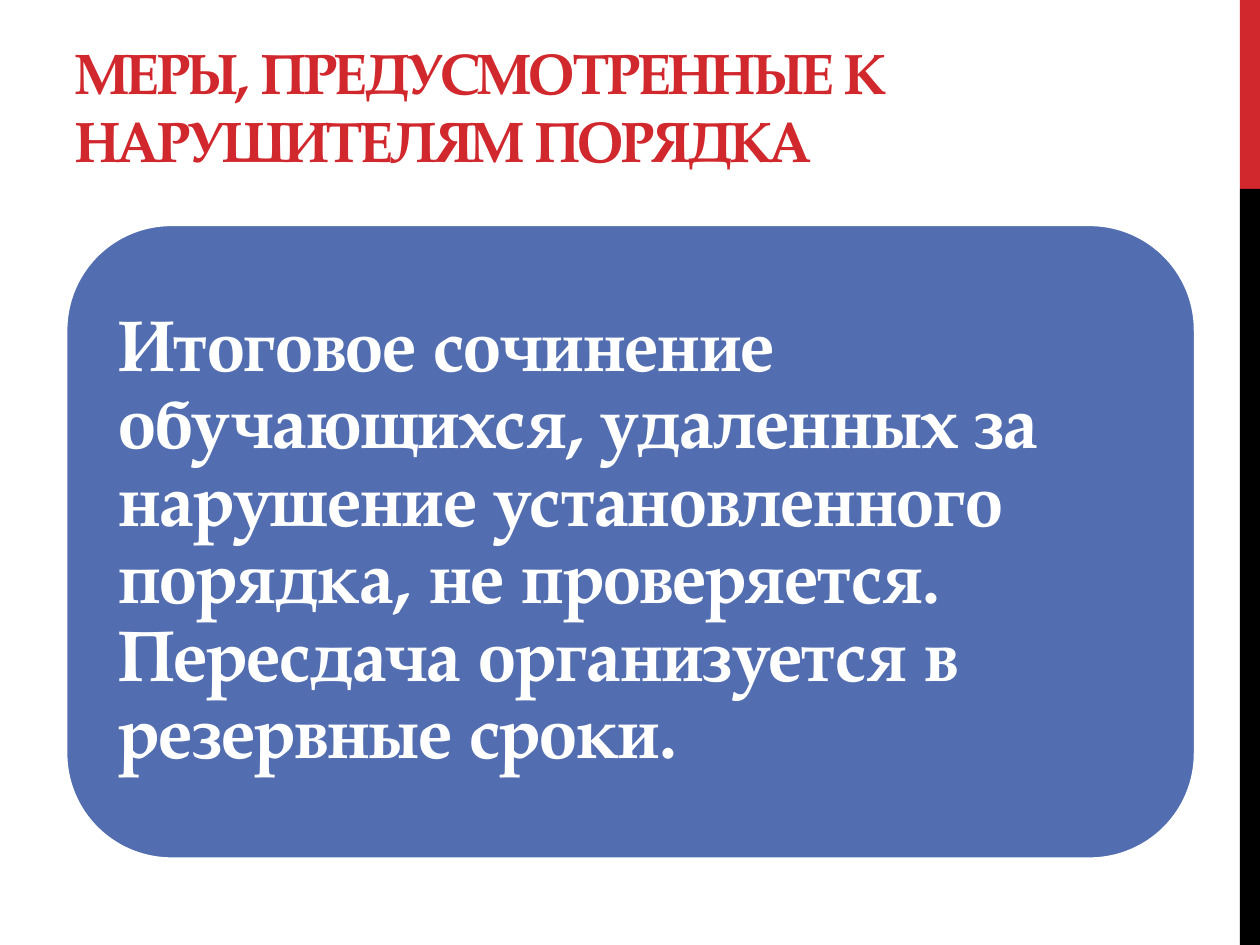
from pptx import Presentation
from pptx.dml.color import RGBColor
from pptx.enum import shapes, text
from pptx.util import Inches, Pt

# Content
TITLE = "МЕРЫ, ПРЕДУСМОТРЕННЫЕ К НАРУШИТЕЛЯМ ПОРЯДКА"
MESSAGE = ("Итоговое сочинение обучающихся, удаленных за нарушение "
           "установленного порядка, не проверяется. Пересдача "
           "организуется в резервные сроки.")

FONT = "TeX Gyre Pagella"
RED = RGBColor(0xD1, 0x28, 0x2E)
BLACK = RGBColor(0, 0, 0)
BLUE = RGBColor(0x52, 0x6D, 0xB0)
WHITE = RGBColor(0xFF, 0xFF, 0xFF)

PAGE_WIDTH, PAGE_HEIGHT = 10, 7.5
STRIPE_WIDTH, RED_HEIGHT = 0.16, 1.5
PANEL = (0.52, 1.78, 8.97, 5.04)
PANEL_INSET = 0.25


def add_panel(page, kind, area, color):
    panel = page.shapes.add_shape(kind, *map(Inches, area))
    panel.shadow.inherit = False
    panel.fill.solid()
    panel.fill.fore_color.rgb = color
    panel.line.fill.background()
    return panel


def write(box, words, size, color, anchor, inset_x, inset_y):
    frame = box.text_frame
    frame.word_wrap = True
    frame.auto_size = text.MSO_AUTO_SIZE.NONE
    frame.vertical_anchor = anchor
    frame.margin_left = frame.margin_right = Inches(inset_x)
    frame.margin_top = frame.margin_bottom = Inches(inset_y)
    para = frame.paragraphs[0]
    para.alignment = text.PP_ALIGN.LEFT
    span = para.add_run()
    span.text = words
    span.font.name = FONT
    span.font.size = Pt(size)
    span.font.bold = True
    span.font.color.rgb = color
    return para, span


deck = Presentation()
deck.slide_width, deck.slide_height = Inches(PAGE_WIDTH), Inches(PAGE_HEIGHT)
page = deck.slides.add_slide(deck.slide_layouts[5])

# Stripe down the right edge
stripe_left = PAGE_WIDTH - STRIPE_WIDTH
for top, bottom, color in ((0, RED_HEIGHT, RED), (RED_HEIGHT, PAGE_HEIGHT, BLACK)):
    add_panel(page, shapes.MSO_SHAPE.RECTANGLE,
              (stripe_left, top, STRIPE_WIDTH, bottom - top), color)

# Title
title = page.shapes.title
title.left, title.top, title.width, title.height = map(Inches, (0.5, 0.17, 7.26, 1.26))
para, span = write(title, TITLE, 32.4, RED, text.MSO_ANCHOR.BOTTOM, 0.1, 0.05)
span.font._element.set("spc", "-60")

# Message on its rounded panel
panel = add_panel(page, shapes.MSO_SHAPE.ROUNDED_RECTANGLE, PANEL, BLUE)
panel.line.color.rgb = WHITE
panel.line.width = Pt(2.25)
left, top, width, height = PANEL
message = page.shapes.add_textbox(
    Inches(left + PANEL_INSET), Inches(top + PANEL_INSET),
    Inches(width - 2 * PANEL_INSET), Inches(height - 2 * PANEL_INSET))
para, span = write(message, MESSAGE, 41, WHITE, text.MSO_ANCHOR.MIDDLE, 0.17, 0.17)
para.line_spacing = 0.9

deck.save("out.pptx")
